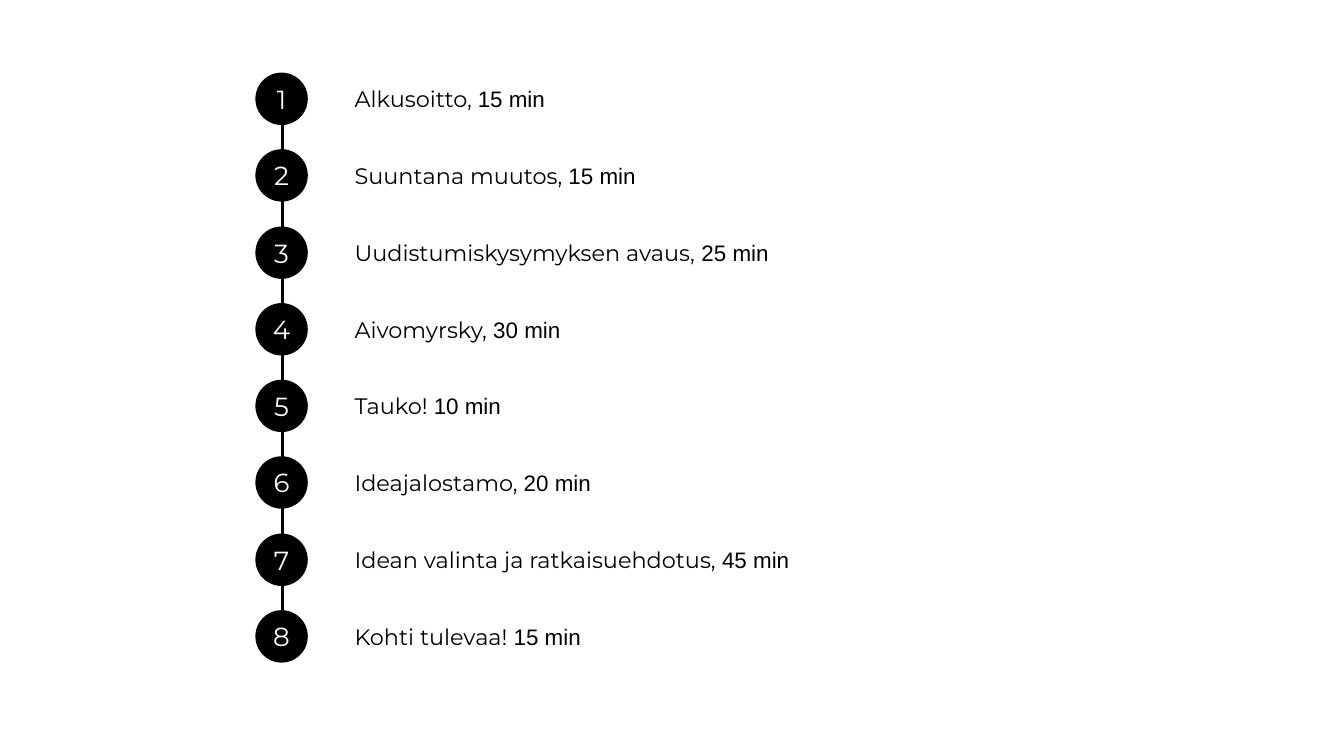
import dataclasses

import lxml.etree
import pptx
import pptx.dml.color
import pptx.enum.shapes
import pptx.enum.text
import pptx.oxml.ns
import pptx.util

EMU_PER_PX = 4572  # 200 px to the inch
SLIDE_WIDTH, SLIDE_HEIGHT = 2000, 1125

MARKER_LEFT, MARKER_SIZE = 380, 78
FIRST_TOP, LAST_TOP = 108, 908
NUMBER_LEFT, NUMBER_WIDTH = 377, 84
TOPIC_LEFT, TOPIC_OFFSET, TOPIC_HEIGHT = 508, 10, 58
TOPIC_WIDTH = 520
SPINE_X, SPINE_TOP, SPINE_BOTTOM = 420, 148, 956
TEXT_INSET = 20

# Topic, duration, width of the text box
AGENDA = [
    ("Alkusoitto, ", "15 min", TOPIC_WIDTH),
    ("Suuntana muutos, ", "15 min", TOPIC_WIDTH),
    ("Uudistumiskysymyksen avaus,", " 25 min", 1068),
    ("Aivomyrsky,", " 30 min", TOPIC_WIDTH),
    ("Tauko! ", "10 min", TOPIC_WIDTH),
    ("Ideajalostamo, ", "20 min", TOPIC_WIDTH),
    ("Idean valinta ja ratkaisuehdotus, ", "45 min", 924),
    ("Kohti tulevaa! ", "15 min", TOPIC_WIDTH),
]


@dataclasses.dataclass(frozen=True)
class Theme:
    ink: str = "000000"
    paper: str = "FFFFFF"
    main_font: str = "Montserrat"
    duration_font: str = "Arial"
    topic_size: int = 12
    number_size: int = 14
    spine_width: float = 1.5


THEME = Theme()


def px(length):
    return pptx.util.Emu(length * EMU_PER_PX)


def rgb(colour):
    return pptx.dml.color.RGBColor.from_string(colour)


def add_marker(slide, top):
    marker = slide.shapes.add_shape(
        pptx.enum.shapes.MSO_SHAPE.OVAL,
        px(MARKER_LEFT), px(top), px(MARKER_SIZE), px(MARKER_SIZE))
    marker.shadow.inherit = False
    marker.fill.solid()
    marker.fill.fore_color.rgb = rgb(THEME.ink)
    marker.line.fill.background()


def add_spine(slide):
    """Draw the line that joins the markers."""
    spine = slide.shapes.add_connector(
        pptx.enum.shapes.MSO_CONNECTOR.STRAIGHT,
        px(SPINE_X), px(SPINE_TOP), px(SPINE_X), px(SPINE_BOTTOM))
    spine.line.color.rgb = rgb(THEME.ink)
    spine.line.width = pptx.util.Pt(THEME.spine_width)
    lxml.etree.SubElement(
        spine._element.spPr, pptx.oxml.ns.qn("a:effectLst"))


def add_label(slide, left, top, width, height, parts, size, colour, align):
    """Add one line of text; parts are pairs of text and font."""
    label = slide.shapes.add_textbox(px(left), px(top), px(width), px(height))
    frame = label.text_frame
    frame.word_wrap = True
    frame.vertical_anchor = pptx.enum.text.MSO_ANCHOR.MIDDLE
    frame.margin_left = frame.margin_right = px(TEXT_INSET)
    frame.margin_top = frame.margin_bottom = px(TEXT_INSET)
    paragraph = frame.paragraphs[0]
    paragraph.alignment = align
    for text, font in parts:
        run = paragraph.add_run()
        run.text = text
        run.font.name = font
        run.font.size = pptx.util.Pt(size)
        run.font.color.rgb = rgb(colour)


def add_topic(slide, top, topic, duration, width):
    add_label(
        slide, TOPIC_LEFT, top + TOPIC_OFFSET, width, TOPIC_HEIGHT,
        [(topic, THEME.main_font), (duration, THEME.duration_font)],
        THEME.topic_size, THEME.ink, pptx.enum.text.PP_ALIGN.LEFT)


def add_number(slide, top, number):
    add_label(
        slide, NUMBER_LEFT, top, NUMBER_WIDTH, MARKER_SIZE,
        [(str(number), THEME.main_font)],
        THEME.number_size, THEME.paper, pptx.enum.text.PP_ALIGN.CENTER)


def main():
    presentation = pptx.Presentation()
    presentation.slide_width = px(SLIDE_WIDTH)
    presentation.slide_height = px(SLIDE_HEIGHT)
    slide = presentation.slides.add_slide(presentation.slide_layouts[6])
    slide.background.fill.solid()
    slide.background.fill.fore_color.rgb = rgb(THEME.paper)

    pitch = (LAST_TOP - FIRST_TOP) / (len(AGENDA) - 1)
    tops = [round(FIRST_TOP + row * pitch) for row in range(len(AGENDA))]
    for top in tops:
        add_marker(slide, top)
    for top, (topic, duration, width) in zip(tops, AGENDA):
        add_topic(slide, top, topic, duration, width)
    add_spine(slide)
    for number, top in enumerate(tops, start=1):
        add_number(slide, top, number)

    presentation.save("out.pptx")


if __name__ == "__main__":
    main()
